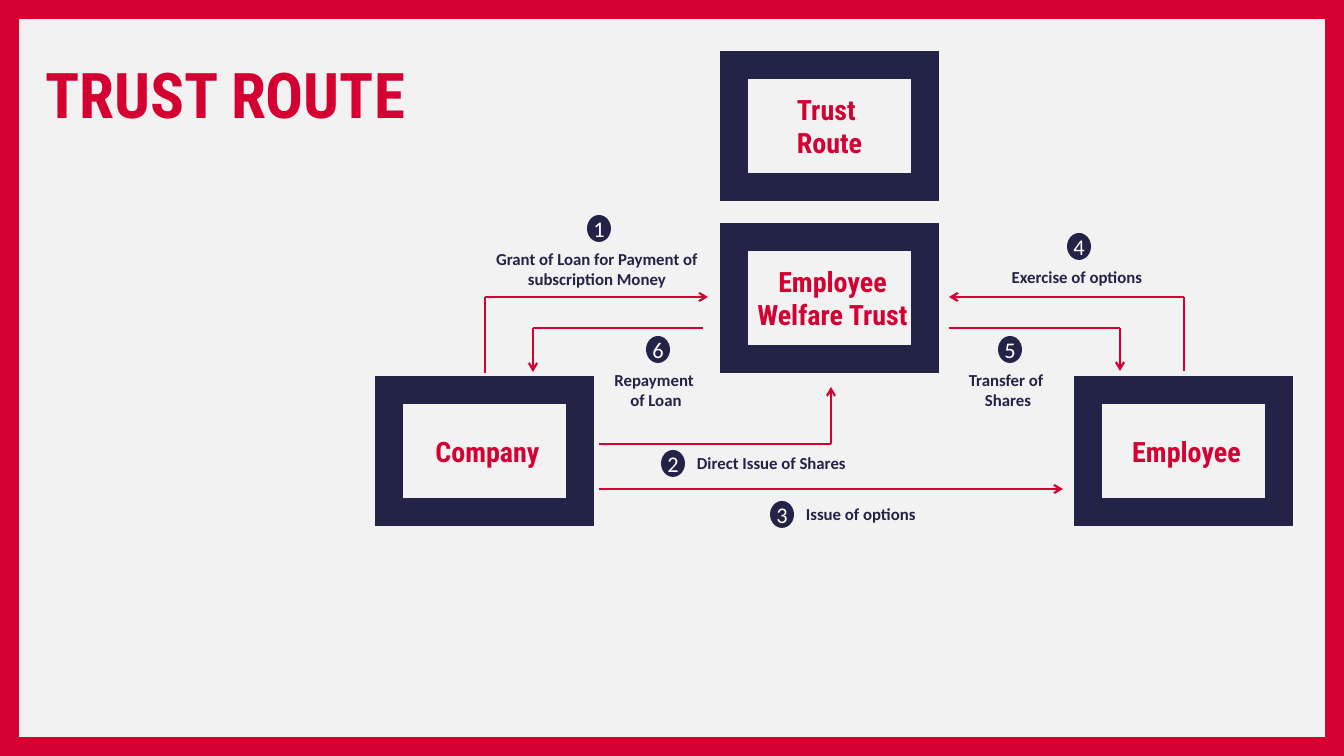
import itertools
import lxml.etree
import pptx
import pptx.dml.color
import pptx.enum.shapes
import pptx.enum.text
import pptx.oxml.ns
import pptx.util

PX = 914400 / 100.8
COLORS = {"red": "D50032", "navy": "232247", "paper": "F2F2F2", "white": "FFFFFF"}
PRESETS = pptx.enum.shapes.MSO_SHAPE
ALIGN = pptx.enum.text.PP_ALIGN
ANCHOR = pptx.enum.text.MSO_ANCHOR
HEADING_FONT = "Roboto Condensed"
qn = pptx.oxml.ns.qn


def emu(*lengths):
    return [round(length * PX) for length in lengths]


def write(shape, text, font, size, color, bold, align, anchor):
    frame = shape.text_frame
    frame.text = text
    frame.word_wrap = True
    frame.vertical_anchor = anchor
    para = frame.paragraphs[0]
    para.alignment = align
    for span in para.runs:
        span.font.name = font
        span.font.size = pptx.util.Pt(size)
        span.font.bold = bold
        span.font.color.rgb = rgb[color]
    return para


rgb = {name: pptx.dml.color.RGBColor.from_string(code) for name, code in COLORS.items()}
deck = pptx.Presentation()
deck.slide_width, deck.slide_height = emu(1344, 756)
page = deck.slides.add_slide(deck.slide_layouts[5])
page.background.fill.solid()
page.background.fill.fore_color.rgb = rgb["paper"]

border = page.shapes.add_shape(PRESETS.RECTANGLE, *emu(8, 9, 1328, 739))
border.shadow.inherit = False
border.fill.background()
border.line.color.rgb = rgb["red"]
border.line.width = pptx.util.Pt(15)
lxml.etree.SubElement(border.line._get_or_add_ln(), qn("a:miter"), lim="800000")

title = page.shapes.title
title.left, title.top, title.width, title.height = emu(35, 50, 982, 87)
write(title, "TRUST ROUTE", HEADING_FONT, 45, "red", True, ALIGN.LEFT, ANCHOR.TOP)
title.text_frame.auto_size = pptx.enum.text.MSO_AUTO_SIZE.NONE

parties = [
    ("Trust \vRoute", 734, 65, 0),
    ("Employee Welfare Trust", 734, 237, 6),
    ("Company", 389, 390, 6),
    ("Employee", 1088, 390, 6),
]
for name, left, top, indent in parties:
    box = page.shapes.add_shape(PRESETS.RECTANGLE, *emu(left, top, 191, 122))
    box.shadow.inherit = False
    box.fill.solid()
    box.fill.fore_color.rgb = rgb["paper"]
    box.line.color.rgb = rgb["navy"]
    box.line.width = pptx.util.Pt(20)
    lxml.etree.SubElement(box.line._get_or_add_ln(), qn("a:miter"), lim="800000")
    para = write(box, name, HEADING_FONT, 20, "red", True, ALIGN.CENTER, ANCHOR.MIDDLE)
    para._p.get_or_add_pPr().set("marL", str(emu(indent)[0]))

routes = [
    [(485, 373), (485, 297), (708, 297)],
    [(703, 328), (533, 328), (533, 372)],
    [(1184, 371), (1184, 297), (949, 297)],
    [(949, 328), (1120, 328), (1120, 371)],
    [(599, 444), (831, 444), (831, 387)],
    [(599, 489), (1063, 489)],
]
for route in routes:
    for start, end in itertools.pairwise(route):
        line = page.shapes.add_connector(
            pptx.enum.shapes.MSO_CONNECTOR.STRAIGHT, *emu(*start, *end))
        line.line.color.rgb = rgb["red"]
        line.line.width = pptx.util.Pt(1.5)
        if end == route[-1]:
            lxml.etree.SubElement(line.line._get_or_add_ln(), qn("a:tailEnd"), type="arrow")
        lxml.etree.SubElement(line._element.spPr, qn("a:effectLst"))

steps = [
    ("1", "Grant of Loan for Payment of subscription Money", 587, 215, "below", 50),
    ("4", "Exercise of options", 1067, 233, "below", 30),
    ("6", "Repayment \vof Loan", 646, 336, "below", 50),
    ("5", "Transfer of \vShares", 998, 336, "below", 50),
    ("3", "Issue of options", 770, 501, "beside", 30),
    ("2", "Direct Issue of Shares", 661, 450, "beside", 30),
]
label_places = {"below": (-121, 29, ALIGN.CENTER), "beside": (26, -2, ALIGN.LEFT)}
for number, wording, left, top, place, height in steps:
    badge = page.shapes.add_shape(PRESETS.OVAL, *emu(left, top, 24, 27))
    badge.shadow.inherit = False
    badge.fill.solid()
    badge.fill.fore_color.rgb = rgb["navy"]
    badge.line.fill.background()
    frame = badge.text_frame
    frame.margin_left = frame.margin_right = frame.margin_top = frame.margin_bottom = 0
    write(badge, number, "Calibri", 16, "white", False, ALIGN.CENTER, ANCHOR.MIDDLE)

    shift_x, shift_y, align = label_places[place]
    label = page.shapes.add_textbox(*emu(left + shift_x, top + shift_y, 262, height))
    write(label, wording, "Calibri", 12, "navy", True, align, ANCHOR.TOP)

deck.save("out.pptx")
